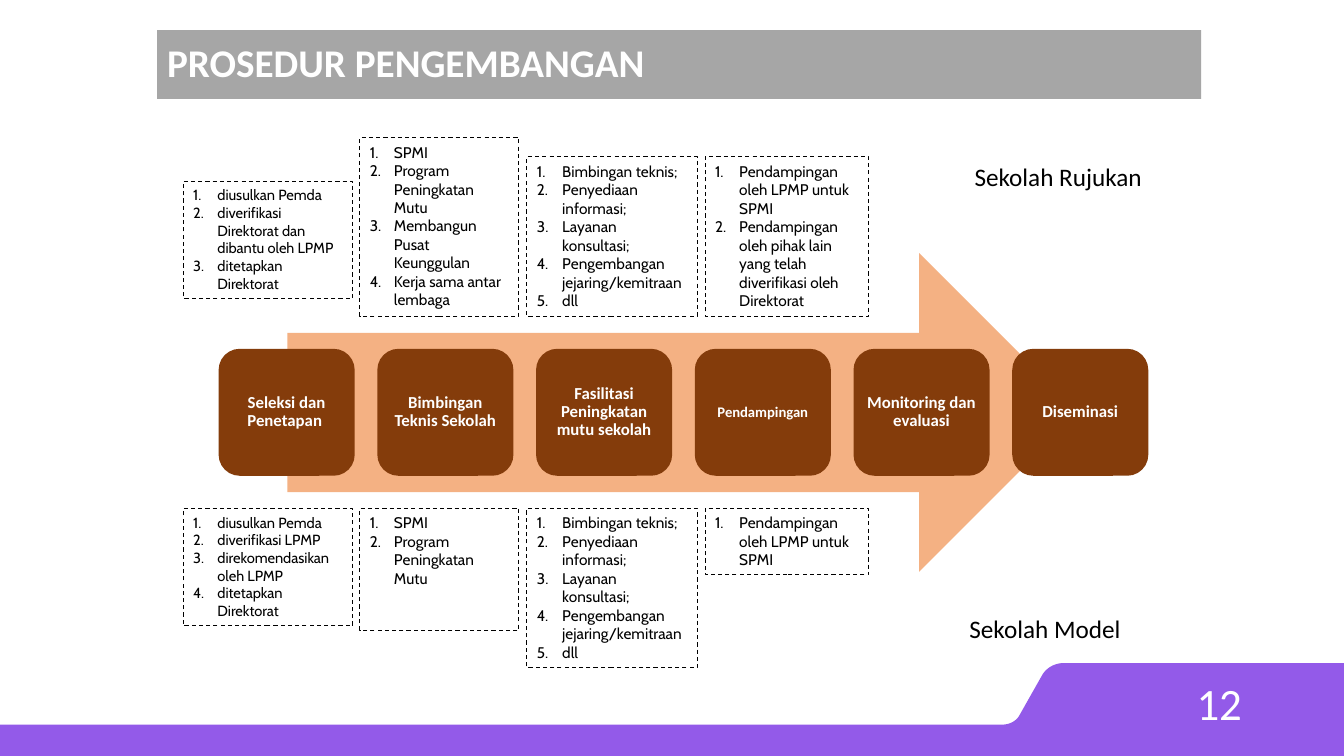
from lxml import etree
from pptx import Presentation
from pptx.dml.color import RGBColor
from pptx.enum.dml import MSO_LINE
from pptx.enum.shapes import MSO_SHAPE
from pptx.enum.text import MSO_ANCHOR, MSO_AUTO_SIZE, PP_ALIGN
from pptx.oxml.ns import qn
from pptx.util import Cm, Pt

RECT, ROUNDED, ARROW = MSO_SHAPE.RECTANGLE, MSO_SHAPE.ROUNDED_RECTANGLE, MSO_SHAPE.RIGHT_ARROW
TOP, MIDDLE = MSO_ANCHOR.TOP, MSO_ANCHOR.MIDDLE
LEFT, CENTER, RIGHT = PP_ALIGN.LEFT, PP_ALIGN.CENTER, PP_ALIGN.RIGHT
DASH = MSO_LINE.DASH
FIXED = MSO_AUTO_SIZE.NONE

WHITE = RGBColor(0xFF, 0xFF, 0xFF)
BLACK = RGBColor(0, 0, 0)
GRAY = RGBColor(0xA6, 0xA6, 0xA6)
PURPLE = RGBColor(0x93, 0x5A, 0xE9)
PEACH = RGBColor(0xF4, 0xB1, 0x83)
BROWN = RGBColor(0x84, 0x3C, 0x0B)

STEPS = [
    ("Seleksi dan Penetapan ", 12),
    ("Bimbingan Teknis Sekolah", 12),
    ("Fasilitasi Peningkatan mutu sekolah", 12),
    ("Pendampingan", 10.5),
    ("Monitoring dan evaluasi", 12),
    ("Diseminasi", 12),
]
FACILITATION = ["Bimbingan teknis;", "Penyediaan informasi;", "Layanan konsultasi;",
                "Pengembangan jejaring/kemitraan", "dll"]
PROGRAMS = ["SPMI", "Program Peningkatan Mutu"]
MENTORING = ["Pendampingan oleh LPMP untuk SPMI"]
NOTES = [
    (4.62, 4.57, 4.27, 2.95, 10.5, 0.61,
     ["diusulkan Pemda", "diverifikasi Direktorat dan dibantu oleh LPMP", "ditetapkan Direktorat"]),
    (9.07, 3.47, 4.01, 4.5, 11, 0.61,
     PROGRAMS + ["Membangun Pusat Keunggulan", "Kerja sama antar lembaga"]),
    (13.28, 3.95, 4.29, 4.02, 11, 0.64, FACILITATION),
    (17.77, 3.95, 4.13, 4.02, 11, 0.61,
     MENTORING + ["Pendampingan oleh pihak lain yang telah diverifikasi oleh Direktorat"]),
    (4.62, 12.82, 4.27, 2.95, 10.5, 0.61,
     ["diusulkan Pemda", "diverifikasi LPMP", "direkomendasikan oleh LPMP", "ditetapkan Direktorat"]),
    (9.07, 12.81, 4.01, 3.07, 11, 0.61, PROGRAMS),
    (13.28, 12.81, 4.29, 4.02, 11, 0.64, FACILITATION),
    (17.77, 12.81, 4.13, 1.67, 11, 0.61, MENTORING),
]


def bezier(p0, p1, p2, p3, steps=12):
    for i in range(steps + 1):
        t = i / steps
        u = 1 - t
        yield tuple(u**3 * a + 3 * u * u * t * b + 3 * u * t * t * c + t**3 * d
                    for a, b, c, d in zip(p0, p1, p2, p3))


class Builder:
    font = "Calibri"
    note_font = "Cabin"

    def __init__(self, slide):
        self.s = slide

    def format(self, tf, size, color, bold=False, align=LEFT, anchor=TOP, font=None):
        tf.auto_size = FIXED
        tf.vertical_anchor = anchor
        for p in tf.paragraphs:
            p.alignment = align
            for r in p.runs:
                r.font.name = font or self.font
                r.font.size = Pt(size)
                r.font.bold = bold
                r.font.color.rgb = color

    def title(self, text, x, y, w, h):
        sp = self.s.shapes.title
        sp.left, sp.top, sp.width, sp.height = Cm(x), Cm(y), Cm(w), Cm(h)
        sp.fill.solid()
        sp.fill.fore_color.rgb = GRAY
        sp.text_frame.text = text
        sp.text_frame.paragraphs[0].line_spacing = 0.9
        self.format(sp.text_frame, 28, WHITE, True, anchor=MIDDLE)

    def shape(self, kind, x, y, w, h, fill=None):
        sp = self.s.shapes.add_shape(kind, Cm(x), Cm(y), Cm(w), Cm(h))
        self.paint(sp, fill)
        return sp

    def paint(self, sp, fill):
        sp.shadow.inherit = False
        sp.line.fill.background()
        if fill is None:
            sp.fill.background()
        else:
            sp.fill.solid()
            sp.fill.fore_color.rgb = fill

    def outline(self, points, fill):
        pts = [(Cm(x), Cm(y)) for x, y in points]
        fb = self.s.shapes.build_freeform(*pts[0])
        fb.add_line_segments(pts[1:], close=True)
        self.paint(fb.convert_to_shape(), fill)

    def step(self, text, size, x, y, w, h):
        tf = self.shape(ROUNDED, x, y, w, h, BROWN).text_frame
        tf.margin_left = tf.margin_right = tf.margin_top = tf.margin_bottom = Cm(0.13)
        tf.text = text
        tf.paragraphs[0].line_spacing = 0.9
        self.format(tf, size, WHITE, True, CENTER, MIDDLE)

    def note(self, x, y, w, h, size, indent, items):
        sp = self.shape(RECT, x, y, w, h)
        sp.line.color.rgb = BLACK
        sp.line.width = Pt(0.75)
        sp.line.dash_style = DASH
        tf = sp.text_frame
        tf.text = "\n".join(items)
        for p in tf.paragraphs:
            pPr = p._p.get_or_add_pPr()
            pPr.set("marL", str(Cm(indent)))
            pPr.set("indent", str(-Cm(indent)))
            etree.SubElement(pPr, qn("a:buFont"), typeface="+mj-lt")
            etree.SubElement(pPr, qn("a:buAutoNum"), type="arabicPeriod")
        self.format(tf, size, BLACK, font=self.note_font)

    def text(self, text, x, y, w, h, size, color, align=LEFT, anchor=TOP, wrap=False):
        tf = self.s.shapes.add_textbox(Cm(x), Cm(y), Cm(w), Cm(h)).text_frame
        tf.word_wrap = wrap
        tf.text = text
        self.format(tf, size, color, align=align, anchor=anchor)


def main():
    prs = Presentation()
    prs.slide_width, prs.slide_height = Cm(33.87), Cm(19.05)
    b = Builder(prs.slides.add_slide(prs.slide_layouts[5]))

    upper = bezier((26.8, 16.71), (26.57, 16.71), (26.36, 16.84), (26.26, 17.02))
    lower = bezier((25.7, 18.01), (25.63, 18.16), (25.45, 18.26), (25.27, 18.26))
    b.outline([*upper, *lower, (0, 18.26), (0, 19.05), (33.87, 19.05), (33.87, 16.71)], PURPLE)
    b.text("12", 23.93, 17.2, 7.62, 1.02, 32, WHITE, RIGHT, MIDDLE, True)
    b.title("PROSEDUR PENGEMBANGAN", 3.96, 0.76, 26.31, 1.73)

    b.shape(ARROW, 7.24, 6.38, 19.94, 8.03, PEACH)
    for i, (text, size) in enumerate(STEPS):
        b.step(text, size, 5.51 + 4 * i, 8.79, 3.43, 3.2)
    for note in NOTES:
        b.note(*note)
    b.text("Sekolah Rujukan", 24.31, 3.95, 4.78, 1.02, 18, BLACK)
    b.text("Sekolah Model", 24.18, 15.32, 4.37, 1.02, 18, BLACK)

    prs.save("out.pptx")


if __name__ == "__main__":
    main()
